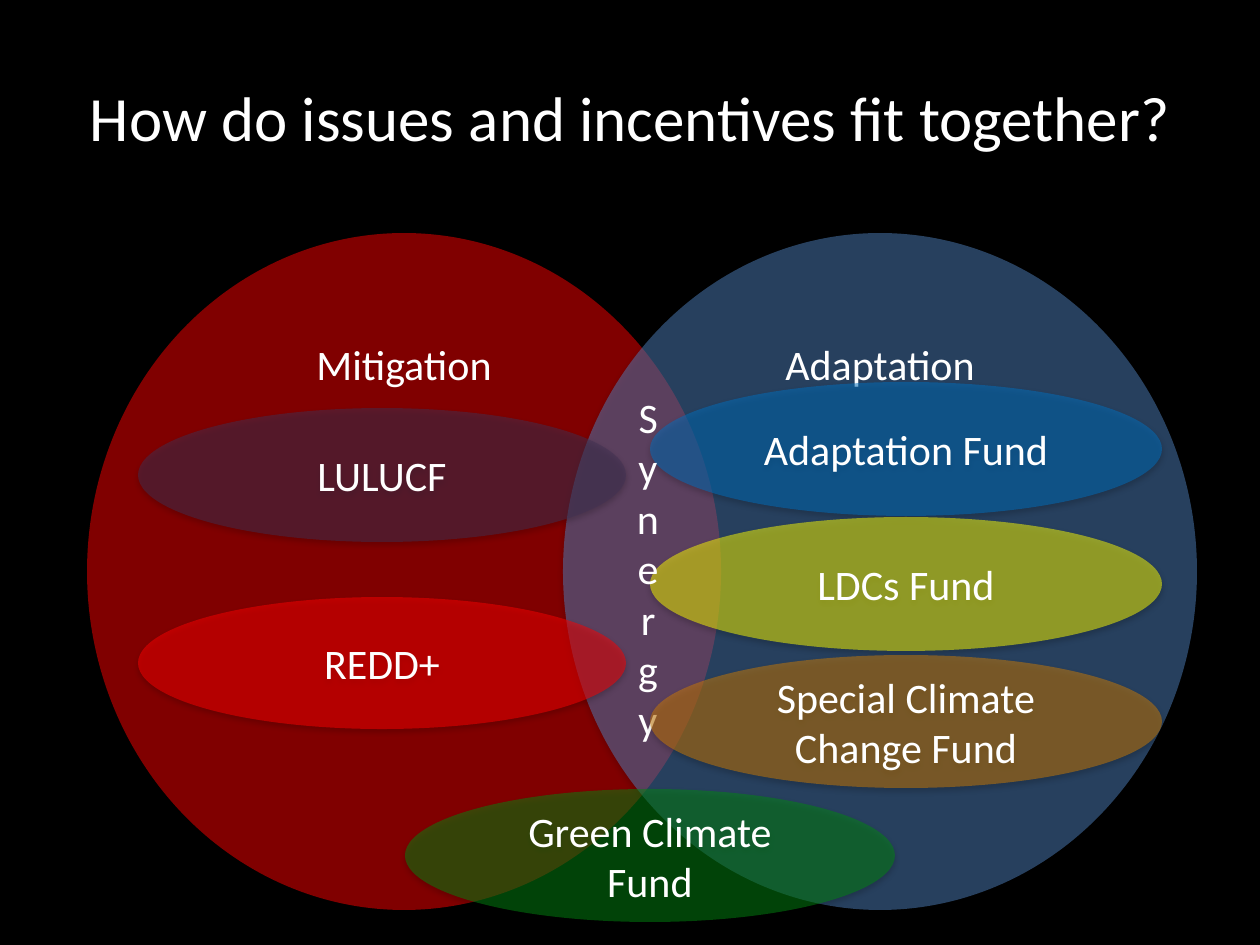
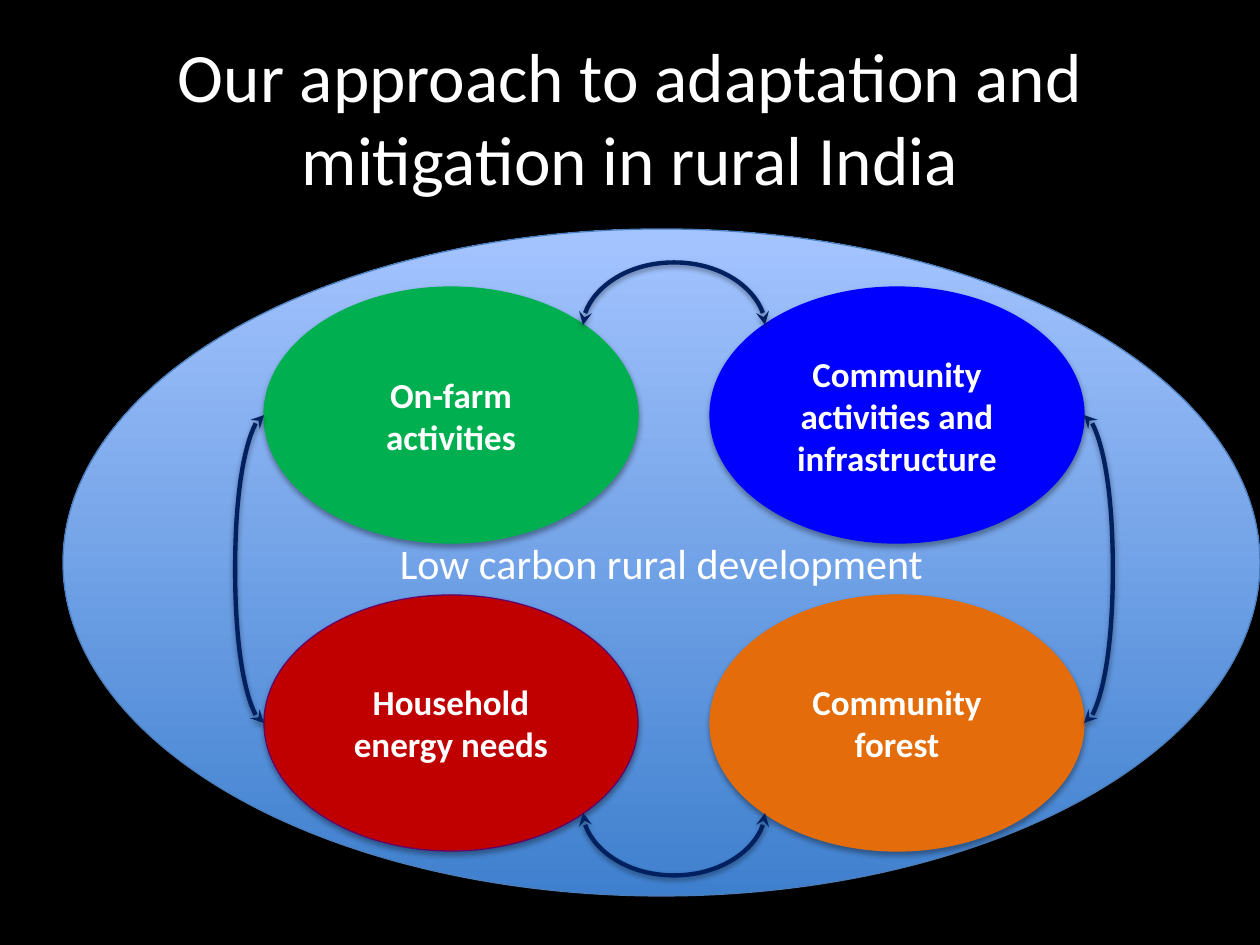
from dataclasses import dataclass

from lxml.etree import SubElement
from pptx import Presentation
from pptx.dml.color import RGBColor
from pptx.enum.shapes import MSO_CONNECTOR as Connector, MSO_SHAPE as Preset
from pptx.enum.text import MSO_ANCHOR as Anchor, MSO_AUTO_SIZE as AutoSize, PP_ALIGN as Align
from pptx.oxml.ns import qn
from pptx.util import Pt

PX = 914400 / 126  # 126 px to the inch
BOW_WIDTH = 1588  # nominal connector thickness in EMU; its bulge is a multiple of it
TITLE_ONLY = 5


@dataclass(frozen=True)
class Theme:
    font: str = "Calibri"
    text: str = "FFFFFF"
    background: str = "000000"
    red: str = "FF0000"
    steel: str = "4F81BD"
    purple: str = "403152"
    blue: str = "0070C0"
    yellow: str = "FFFF00"
    amber: str = "CE7B02"
    dark_green: str = "038710"
    gradient: tuple = ("3F80CE", "A4C4FF")
    gradient_edge: str = "4B7EBC"
    green: str = "00B050"
    pure_blue: str = "0000FF"
    orange: str = "E46C0A"
    crimson: str = "C00000"
    violet: str = "660066"
    navy: str = "002060"
    incentives_title_size: float = 36
    approach_title_size: float = 39.6
    label_size: float = 24
    activity_size: float = 20


THEME = Theme()


def px(value):
    return round(value * PX)


def rgb(value):
    return RGBColor.from_string(value)


def write(frame, text, size, anchor=Anchor.MIDDLE, bold=False):
    frame.text = text
    frame.word_wrap = True
    frame.vertical_anchor = anchor
    for paragraph in frame.paragraphs:
        paragraph.alignment = Align.CENTER
        for run in paragraph.runs:
            run.font.name = THEME.font
            run.font.size = Pt(size)
            run.font.bold = bold
            run.font.color.rgb = rgb(THEME.text)


def add_shadow(effects, opacity, distance):
    shadow = SubElement(effects, qn("a:outerShdw"), blurRad="40000", dist=str(distance),
                        dir="5400000", rotWithShape="0")
    color = SubElement(shadow, qn("a:srgbClr"), val="000000")
    SubElement(color, qn("a:alpha"), val=str(opacity * 1000))


def add_title(slide, text, size):
    title = slide.shapes.title
    title.left, title.top, title.width, title.height = map(px, (63, 38, 1134, 157))
    write(title.text_frame, text, size)
    title.text_frame.auto_size = AutoSize.NONE


def add_ellipse(slide, box, text, size, edge=None, anchor=Anchor.MIDDLE, bold=False):
    """Add a labelled ellipse with a soft shadow; the caller fills it."""
    ellipse = slide.shapes.add_shape(Preset.OVAL, *map(px, box))
    if edge:
        ellipse.line.color.rgb = rgb(edge)
        ellipse.line.width = Pt(0.75)
    else:
        ellipse.line.fill.background()
    ellipse.shadow.inherit = False
    add_shadow(ellipse._element.spPr.find(qn("a:effectLst")), 35, 23000)
    write(ellipse.text_frame, text, size, anchor, bold)
    return ellipse


def add_glass_ellipse(slide, box, text, color, anchor=Anchor.MIDDLE):
    ellipse = add_ellipse(slide, box, text, THEME.label_size, anchor=anchor)
    ellipse.fill.solid()
    ellipse.fill.fore_color.rgb = rgb(color)
    fill_color = ellipse._element.spPr.find(qn("a:solidFill")).find(qn("a:srgbClr"))
    SubElement(fill_color, qn("a:alpha"), val="50000")


def add_activity(slide, box, text, color, edge):
    ellipse = add_ellipse(slide, box, text, THEME.activity_size, edge, bold=True)
    ellipse.fill.solid()
    ellipse.fill.fore_color.rgb = rgb(color)
    return ellipse


def add_stacked_label(slide, box, text):
    label = slide.shapes.add_textbox(*map(px, box))
    write(label.text_frame, text, THEME.label_size)
    label.text_frame.auto_size = AutoSize.SHAPE_TO_FIT_TEXT
    label.text_frame._txBody.bodyPr.set("vert", "wordArtVert")


def add_bow(slide, start, end, sites, center, length, bulge, rotation, flips):
    """Add a curved double arrow that joins a connection site of each shape."""
    connector = slide.shapes.add_connector(Connector.CURVE, 0, 0, 0, 0)
    connector.width, connector.height = BOW_WIDTH, px(length)
    connector.left = px(center[0]) - BOW_WIDTH // 2
    connector.top = px(center[1] - length / 2)
    connector.line.color.rgb = rgb(THEME.navy)
    connector.line.width = Pt(2.5)

    properties = connector._element.spPr
    transform = properties.find(qn("a:xfrm"))
    transform.set("rot", str(rotation * 60000))
    for flip in flips:
        transform.set("flip" + flip, "1")
    adjustments = properties.find(qn("a:prstGeom")).find(qn("a:avLst"))
    ratio = round(px(bulge) / BOW_WIDTH * 100000)
    SubElement(adjustments, qn("a:gd"), name="adj1", fmla=f"val {ratio}")
    for tag in ("a:headEnd", "a:tailEnd"):
        SubElement(properties.find(qn("a:ln")), qn(tag), type="stealth")
    add_shadow(SubElement(properties, qn("a:effectLst")), 38, 20000)

    joints = connector._element.nvCxnSpPr.cNvCxnSpPr
    for tag, shape, site in zip(("a:stCxn", "a:endCxn"), (start, end), sites):
        SubElement(joints, qn(tag), id=str(shape.shape_id), idx=str(site))


def build_incentives(slide):
    add_title(slide, "How do issues and incentives fit together?", THEME.incentives_title_size)

    # Overlapping circles
    for left, text, color in ((87, "Mitigation", THEME.red), (563, "Adaptation", THEME.steel)):
        add_glass_ellipse(slide, (left, 233, 634, 677), text, color, Anchor.TOP)

    # Incentives within the circles
    for box, text, color in (
        ((138, 408, 488, 134), "LULUCF", THEME.purple),
        ((138, 597, 488, 132), "REDD+", THEME.red),
        ((650, 382, 512, 134), "Adaptation Fund", THEME.blue),
        ((650, 517, 512, 134), "LDCs Fund", THEME.yellow),
    ):
        add_glass_ellipse(slide, box, text, color)
    add_stacked_label(slide, (605, 349, 86, 438), "Synergy")
    add_glass_ellipse(slide, (650, 655, 512, 133), "Special Climate Change Fund", THEME.amber)
    add_glass_ellipse(slide, (405, 789, 490, 133), "Green Climate Fund", THEME.dark_green)


def build_approach(slide):
    # Overall goal
    goal = add_ellipse(slide, (63, 229, 1197, 667), "Low carbon rural development",
                       THEME.label_size, THEME.gradient_edge)
    goal.fill.gradient()
    goal.fill.gradient_angle = 90
    for stop, color in zip(goal.fill.gradient_stops, THEME.gradient):
        stop.color.rgb = rgb(color)
    add_title(slide, "Our approach to adaptation and mitigation in rural India",
              THEME.approach_title_size)

    # Two by two activities
    left, right, upper, lower = 264, 710, 287, 595
    width, height = 374, 256
    farm, infrastructure, forest, household = [
        add_activity(slide, (x, y, width, height), text, color, edge)
        for x, y, text, color, edge in (
            (left, upper, "On-farm activities", THEME.green, THEME.green),
            (right, upper, "Community activities and infrastructure",
             THEME.pure_blue, THEME.pure_blue),
            (right, lower, "Community forest", THEME.orange, THEME.orange),
            (left, lower, "Household\nenergy needs", THEME.crimson, THEME.violet),
        )
    ]

    # Arrows between neighbours; sites run anticlockwise from 0 at the top
    middle_x, middle_y = (left + right + width) / 2, (upper + lower + height) / 2
    across, down = 182, lower - upper
    add_bow(slide, farm, infrastructure, (7, 1), (middle_x, 325), across, 69, 90, "HV")
    add_bow(slide, infrastructure, forest, (6, 6), (right + width, middle_y), down, 32, 0, "")
    add_bow(slide, household, forest, (5, 3), (middle_x, 813), across, 69, 270, "H")
    add_bow(slide, farm, household, (2, 2), (left, middle_y), down, 32, 180, "V")


def main():
    presentation = Presentation()
    presentation.slide_width, presentation.slide_height = px(1260), px(945)
    background = presentation.slide_master.background.fill
    background.solid()
    background.fore_color.rgb = rgb(THEME.background)
    for build in (build_incentives, build_approach):
        build(presentation.slides.add_slide(presentation.slide_layouts[TITLE_ONLY]))
    presentation.save("out.pptx")


if __name__ == "__main__":
    main()
